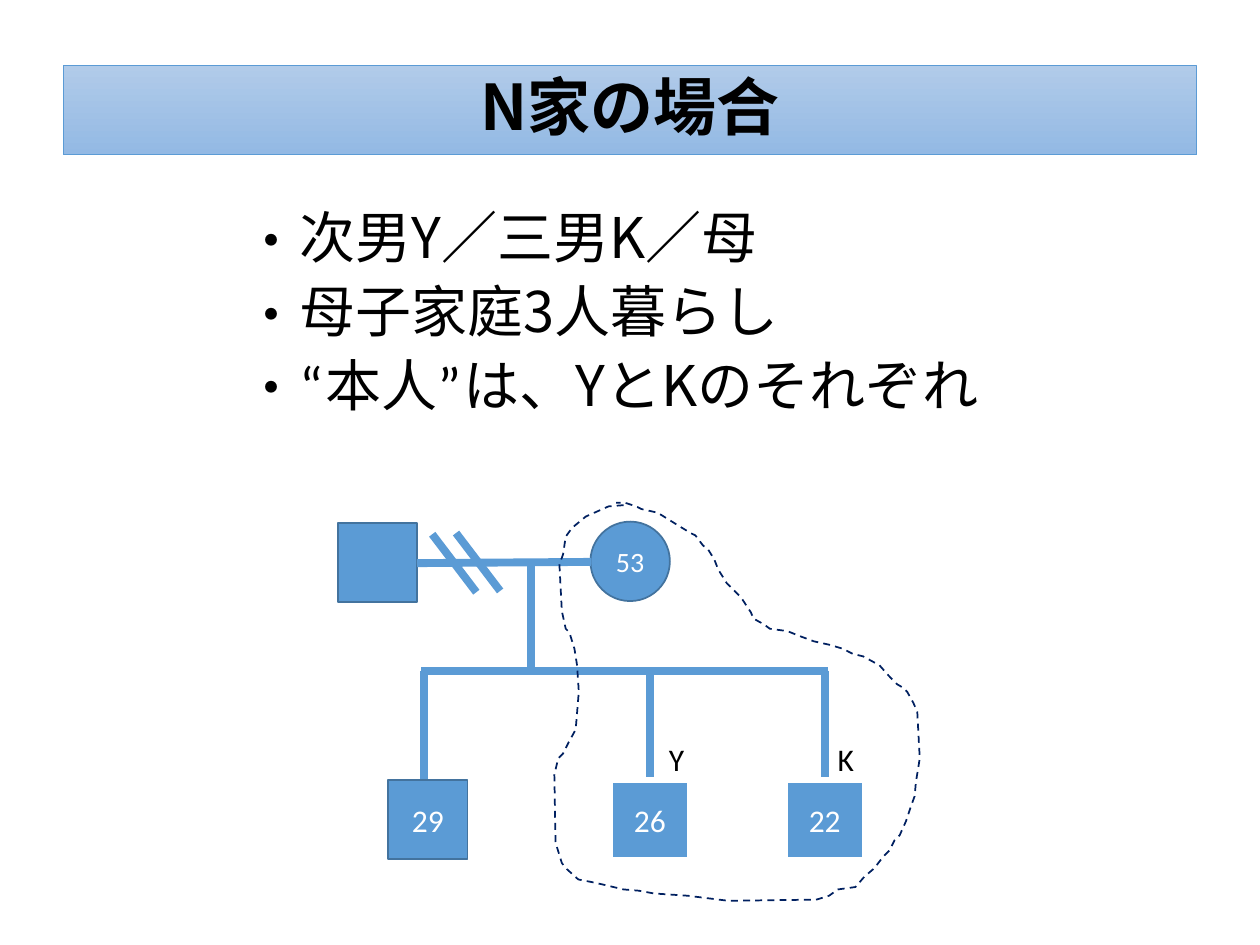
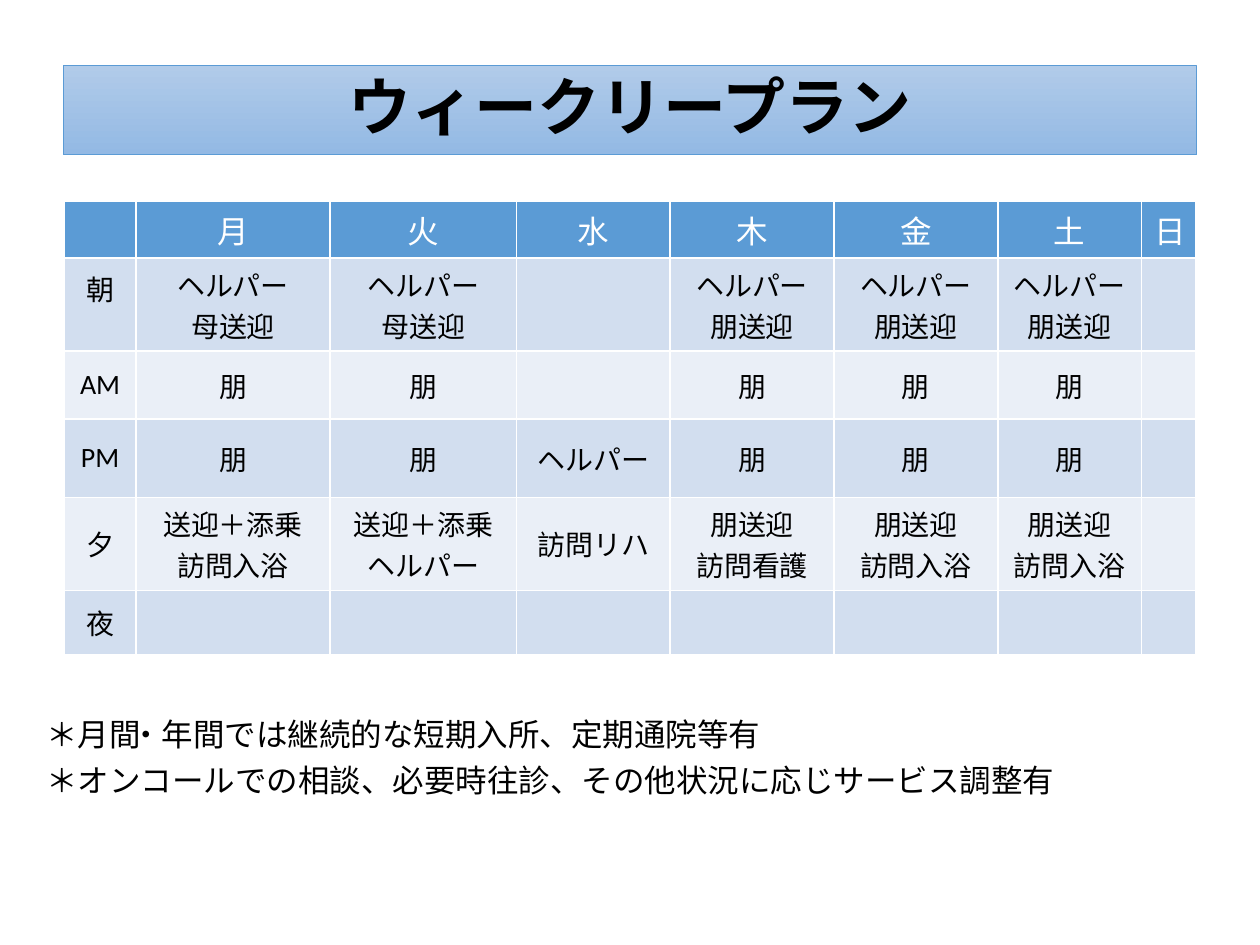
from lxml.etree import SubElement
from pptx import Presentation
from pptx.dml.color import RGBColor
from pptx.enum.dml import MSO_LINE
from pptx.enum.shapes import MSO_CONNECTOR, MSO_SHAPE
from pptx.enum.text import MSO_ANCHOR as Anchor, PP_ALIGN as Align
from pptx.oxml.ns import qn
from pptx.util import Pt

GOTHIC, LATIN = "Noto Sans CJK JP", "Calibri"
BLACK, WHITE, BLUE, DARK_BLUE, NAVY = "000000", "FFFFFF", "5B9BD5", "43739E", "002060"
BAND_TOP, BAND_BOTTOM = "B1CBE9", "93B9E4"
ROW_FILLS = ["D2DEEF", "EAEFF7"]

TITLE_BOX = (36, 37.44, 648, 51.12)
PERSON_SIZE = 45.4

HOUSEHOLD_OUTLINE = [
    (163.4, 1.7), (154.8, 2.4), (141.8, 8.2), (133.9, 14.7), (130.3, 19.7), (128.8, 29.8),
    (126.7, 35.6), (128.1, 62.2), (130.3, 72.3), (132.4, 74.4), (135.3, 83.8), (136.8, 93.2),
    (137.8, 108.3), (136, 129.9), (131.7, 137.8), (128.8, 143.6), (126, 146.4), (123.8, 155.8),
    (124.5, 194), (125.2, 196.8), (128.1, 206.2), (130.3, 209.1), (137.5, 215.6), (144.7, 217),
    (151.2, 218.4), (163.4, 221.3), (172, 222), (180.7, 223.6), (200.1, 224.9), (223.2, 227.8),
    (273.6, 227.1), (280.8, 224.9), (285.8, 221.3), (295.9, 219.9), (300.9, 214.1), (306.7, 209.1),
    (311.7, 202.6), (315.3, 199), (318.2, 193.2), (321.1, 190.4), (324.7, 182.4), (327.6, 173.8),
    (329.7, 168), (330.4, 160.1), (332.6, 146.4), (331.2, 119.8), (329, 114.8), (325.4, 108.3),
    (323.2, 106.1), (319.6, 104), (314.6, 98.9), (309.6, 93.2), (300.2, 88.1), (294.4, 86.7),
    (288.7, 83.8), (281.5, 81.6), (272.1, 79.5), (264.2, 76.6), (257, 73.7), (246.9, 72.3),
    (244, 70.1), (237.6, 66.5), (236.1, 62.9), (230.4, 54.3), (226.8, 50.7), (222.4, 46.4),
    (217.4, 38.4), (215.2, 32.7), (211.6, 26.9), (208.8, 24.8), (204.4, 19), (201.6, 17.6),
    (194.4, 13.2), (188.6, 9.6), (182.8, 6), (173.5, 3.9), (170.6, 2.4), (164.1, 0.3), (159.1, 0.3),
]

DAYS = ["", "月", "火", "水", "木", "金", "土", "日"]
HELPER_MOTHER, HELPER_TOMO = "ヘルパー\n母送迎", "ヘルパー\n朋送迎"
TOMO_BATH = "朋送迎\n訪問入浴"
PLAN = [
    ["朝", HELPER_MOTHER, HELPER_MOTHER, "", HELPER_TOMO, HELPER_TOMO, HELPER_TOMO, ""],
    ["AM", "朋", "朋", "", "朋", "朋", "朋", ""],
    ["PM", "朋", "朋", "ヘルパー", "朋", "朋", "朋", ""],
    ["夕", "送迎＋添乗\n訪問入浴", "送迎＋添乗\nヘルパー", "訪問リハ",
     "朋送迎\n訪問看護", TOMO_BATH, TOMO_BATH, ""],
    ["夜"] + [""] * 7,
]
COLUMN_WIDTHS = [41, 110.9, 106.6, 87.8, 93.6, 93.6, 82.1, 31]
ROW_HEIGHTS = [32.6, 53.2, 38.9, 44.6, 53.2, 36.7]


def color(hex_string):
    return RGBColor.from_string(hex_string)


def points(*lengths):
    return [Pt(length) for length in lengths]


def write(frame, text, size=18, font=LATIN, asian=None, ink=BLACK, bold=False,
          align=Align.LEFT, anchor=Anchor.TOP, line_spacing=None, gap=0, bullet=None, spaced=None):
    """Fill a text frame, one paragraph for each line; spaced maps strings to letter spacing."""
    spaced = spaced or {}
    frame.word_wrap = True
    frame.vertical_anchor = anchor
    for index, line in enumerate(text.split("\n")):
        paragraph = frame.add_paragraph() if index else frame.paragraphs[0]
        paragraph.alignment = align
        paragraph.line_spacing = line_spacing
        paragraph.space_before = Pt(gap if index else 0)
        if bullet:
            add_bullet(paragraph, bullet, font, size)
        for string in spaced:
            line = line.replace(string, f"|{string}|")
        for piece in filter(None, line.split("|")):
            run = paragraph.add_run()
            run.text = piece
            run.font.size, run.font.bold = Pt(size), bold
            run.font.color.rgb = color(ink)
            run.font.name = LATIN if piece in spaced else font
            properties = run._r.get_or_add_rPr()
            SubElement(properties, qn("a:ea"), typeface=asian or run.font.name)
            if piece in spaced:
                properties.set("spc", str(round(spaced[piece] * 100)))


def add_bullet(paragraph, character, font, indent):
    properties = paragraph._p.get_or_add_pPr()
    properties.set("marL", str(Pt(indent)))
    properties.set("indent", str(-Pt(indent)))
    SubElement(properties, qn("a:buFont"), typeface=font)
    SubElement(properties, qn("a:buChar"), char=character)


def add_text(slide, box, text, **text_format):
    write(slide.shapes.add_textbox(*points(*box)).text_frame, text, **text_format)


def add_box(slide, kind, box, line=DARK_BLUE, width=1):
    shape = slide.shapes.add_shape(kind, *points(*box))
    shape.shadow.inherit = False
    shape.fill.solid()
    shape.fill.fore_color.rgb = color(BLUE)
    shape.line.color.rgb = color(line)
    shape.line.width = Pt(width)
    return shape


def add_title(slide, text):
    band = add_box(slide, MSO_SHAPE.RECTANGLE, TITLE_BOX, line=BLUE, width=0.5)
    band.fill.gradient()
    band.fill.gradient_angle = 270
    for stop, shade in zip(band.fill.gradient_stops, (BAND_TOP, BAND_BOTTOM)):
        stop.color.rgb = color(shade)
    write(band.text_frame, text, size=36, font=GOTHIC, bold=True, align=Align.CENTER,
          anchor=Anchor.MIDDLE, line_spacing=0.9)


def add_family_tree(slide, left, top):
    def link(x1, y1, x2, y2):
        connector = slide.shapes.add_connector(
            MSO_CONNECTOR.STRAIGHT, *points(left + x1, top + y1, left + x2, top + y2))
        connector.line.color.rgb = color(BLUE)
        connector.line.width = Pt(4.5)
        SubElement(connector._element.spPr, qn("a:effectLst"))

    def person(kind, x, y, age="", size=18, **outline):
        shape = add_box(slide, kind, (left + x, top + y, PERSON_SIZE, PERSON_SIZE), **outline)
        if age:
            write(shape.text_frame, age, size=size, ink=WHITE, align=Align.CENTER,
                  anchor=Anchor.MIDDLE)

    couple_y, sibling_y, child_y = 34.1, 96.3, 158.7
    person(MSO_SHAPE.OVAL, 144.4, 11.1, "53", size=16)
    person(MSO_SHAPE.RECTANGLE, 0, 11.8)
    link(144.7, couple_y, 45.3, couple_y + 0.7)
    for x, y in [(54, 18.3), (67.6, 17.6)]:
        link(x, y, x + 25.2, y + 33.1)
    link(110.4, couple_y, 110.4, sibling_y)
    link(280, sibling_y, 47.5, sibling_y)

    household = {"line": WHITE, "width": 3}
    children = [(49.4, 28.8, "29", {}), (178.5, 155.7, "26", household),
                (278.6, 255.6, "22", household)]
    for stem_x, x, age, outline in children:
        link(stem_x, sibling_y, stem_x, child_y)
        person(MSO_SHAPE.RECTANGLE, x, child_y, age, **outline)

    add_household_outline(slide, left, top)
    for x, name in [(182.1, "Y"), (278.6, "K")]:
        add_text(slide, (left + x, top + 132.4, 33.8, 28.8), name)


def add_household_outline(slide, left, top):
    corners = [points(left + x, top + y) for x, y in HOUSEHOLD_OUTLINE]
    builder = slide.shapes.build_freeform(*corners[0])
    builder.add_line_segments(corners[1:], close=False)
    outline = builder.convert_to_shape()
    outline.shadow.inherit = False
    outline.fill.background()
    outline.line.color.rgb = color(NAVY)
    outline.line.width = Pt(1)
    outline.line.dash_style = MSO_LINE.DASH


def add_weekly_table(slide, left, top):
    box = points(left, top, sum(COLUMN_WIDTHS), sum(ROW_HEIGHTS))
    table = slide.shapes.add_table(len(ROW_HEIGHTS), len(COLUMN_WIDTHS), *box).table
    for column, width in zip(table.columns, COLUMN_WIDTHS):
        column.width = Pt(width)
    for row, height in zip(table.rows, ROW_HEIGHTS):
        row.height = Pt(height)
    for row_index, texts in enumerate([DAYS] + PLAN):
        header = row_index == 0
        for column_index, text in enumerate(texts):
            cell = table.cell(row_index, column_index)
            cell.fill.solid()
            cell.fill.fore_color.rgb = color(BLUE if header else ROW_FILLS[(row_index - 1) % 2])
            if text:
                write(cell.text_frame, text, size=18 if header else 16, asian=GOTHIC,
                      ink=WHITE if header else BLACK, align=Align.CENTER)
                cell.vertical_anchor = Anchor.MIDDLE
    table.cell(1, 0).margin_bottom = Pt(21.9)


def build_family_slide(slide):
    add_text(slide, (132, 116.64, 552, 130),
             "次男Y／三男K／母\n母子家庭3人暮らし\n“本人”は、YとKのそれぞれ",
             size=32, font=GOTHIC, line_spacing=0.9, gap=7.5, bullet="・",
             spaced={"“": 1.5, "”": 1.5})
    add_family_tree(slide, 193, 287)
    add_title(slide, "N家の場合")


def build_plan_slide(slide):
    add_text(slide, (19.4, 407.5, 655, 60),
             "＊月間・年間では継続的な短期入所、定期通院等有\n"
             "＊オンコールでの相談、必要時往診、その他状況に応じサービス調整有",
             line_spacing=0.9, gap=6.6, spaced={"間・": -6.1})
    add_weekly_table(slide, 36.72, 114.9)
    add_title(slide, "ウィークリープラン")


def main():
    presentation = Presentation()
    presentation.slide_width, presentation.slide_height = points(720, 540)
    blank = presentation.slide_layouts[6]
    for build in (build_family_slide, build_plan_slide):
        build(presentation.slides.add_slide(blank))
    presentation.save("out.pptx")


if __name__ == "__main__":
    main()
